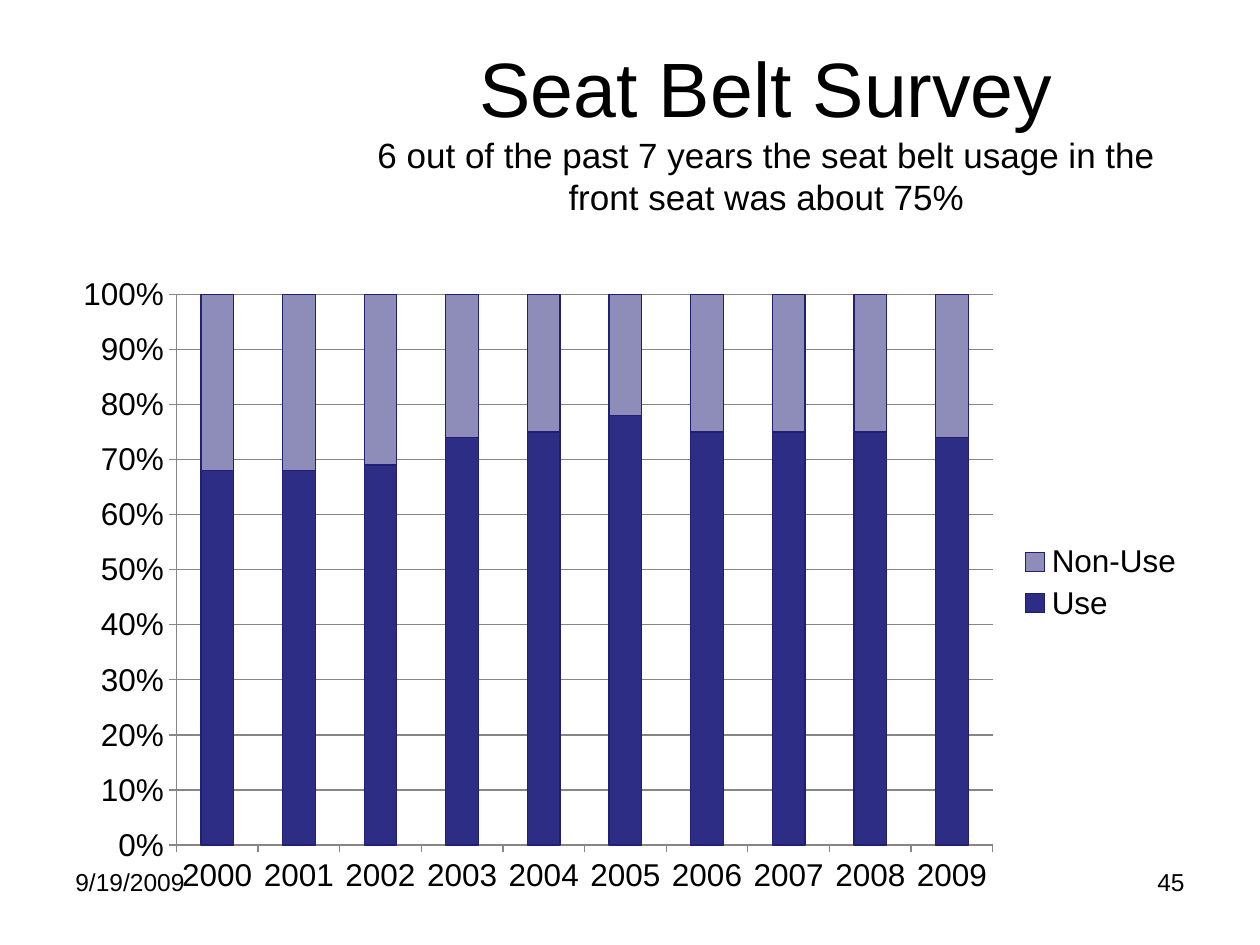
"""Build a slide with a stacked chart of seat belt use by year."""
from dataclasses import dataclass

from lxml import etree
from pptx import Presentation
from pptx.chart.data import CategoryChartData
from pptx.dml.color import RGBColor
from pptx.enum.chart import XL_CHART_TYPE, XL_LEGEND_POSITION, XL_TICK_MARK
from pptx.enum.text import MSO_ANCHOR, MSO_AUTO_SIZE, PP_ALIGN
from pptx.oxml import parse_xml
from pptx.oxml.ns import nsdecls
from pptx.util import Cm, Pt

STACKED = XL_CHART_TYPE.COLUMN_STACKED_100
LEGEND_RIGHT = XL_LEGEND_POSITION.RIGHT
TICK_OUTSIDE = XL_TICK_MARK.OUTSIDE
MIDDLE = MSO_ANCHOR.MIDDLE
NO_FIT = MSO_AUTO_SIZE.NONE
LEFT, CENTER, RIGHT = PP_ALIGN.LEFT, PP_ALIGN.CENTER, PP_ALIGN.RIGHT

FONT = "Arial"
COLORS = {"text": "000000", "use": "2D2D86", "non_use": "8E8CB8",
          "outline": "1F1F73", "grid": "868686"}
PLOT_AREA = {"x": 0.1, "y": 0.05, "w": 0.72, "h": 0.86}
YEARS = [str(year) for year in range(2000, 2010)]
USE = [68, 68, 69, 74, 75, 78, 75, 75, 75, 74]


@dataclass
class Footer:
    text: str
    left: float
    align: PP_ALIGN


FOOTERS = [Footer("9/19/2009", 1.27, LEFT), Footer("45", 18.2, RIGHT)]


def color(name: str) -> RGBColor:
    """Return a named colour."""
    return RGBColor.from_string(COLORS[name])


def apply(target, values: dict) -> None:
    """Set each attribute of the target from the values."""
    for name, value in values.items():
        setattr(target, name, value)


def style_font(font, size: int) -> None:
    """Give a font the slide's typeface and colour."""
    apply(font, {"name": FONT, "size": Pt(size), "bold": False})
    font.color.rgb = color("text")


def add_title(page) -> None:
    """Fill the title placeholder with a heading and a smaller second line."""
    box = page.shapes.title
    apply(box, {"left": Cm(6.77), "top": Cm(1.9), "width": Cm(17.36), "height": Cm(3.18)})
    apply(box.text_frame, {"vertical_anchor": MIDDLE, "auto_size": NO_FIT,
                           "word_wrap": True, "margin_bottom": Cm(1.91)})
    para = box.text_frame.paragraphs[0]
    para.alignment = CENTER
    heading = para.add_run()
    heading.text = "Seat Belt Survey"
    style_font(heading.font, 44)
    para.add_line_break()
    finding = para.add_run()
    finding.text = "6 out of the past 7 years the seat belt usage in the front seat was about 75%"
    style_font(finding.font, 20)


def place_plot(chart) -> None:
    """Fix the inner plot area as fractions of the chart."""
    plot_area = chart._chartSpace.chart.plotArea
    for old in plot_area.findall("{*}layout"):
        plot_area.remove(old)
    layout = parse_xml(f"<c:layout {nsdecls('c')}><c:manualLayout/></c:layout>")
    settings = {"layoutTarget": "inner", "xMode": "edge", "yMode": "edge", **PLOT_AREA}
    namespace = etree.QName(layout).namespace
    for name, value in settings.items():
        etree.SubElement(layout[0], f"{{{namespace}}}{name}").set("val", str(value))
    plot_area.insert(0, layout)


def add_survey_chart(page) -> None:
    """Add the chart of use and non-use shares."""
    data = CategoryChartData()
    data.categories = YEARS
    data.add_series("Use ", USE)
    data.add_series("Non-Use", [100 - share for share in USE])
    chart = page.shapes.add_chart(
        STACKED, Cm(1.27), Cm(5.29), Cm(22.86), Cm(12.91), data).chart
    style_font(chart.font, 18)
    apply(chart, {"has_title": False, "has_legend": True})
    apply(chart.legend, {"position": LEGEND_RIGHT, "include_in_layout": False})

    plot = chart.plots[0]
    apply(plot, {"gap_width": 150, "overlap": 100, "vary_by_categories": False})
    for series, name in zip(plot.series, ("use", "non_use")):
        series.format.fill.solid()
        series.format.fill.fore_color.rgb = color(name)
        series.format.line.color.rgb = color("outline")
        series.format.line.width = Pt(0.75)

    shares = chart.value_axis
    apply(shares, {"minimum_scale": 0, "maximum_scale": 1, "major_unit": 0.1,
                   "has_major_gridlines": True})
    apply(shares.tick_labels, {"number_format": "0%", "number_format_is_linked": False})
    for axis in (shares, chart.category_axis):
        axis.major_tick_mark = TICK_OUTSIDE
    for part in (shares, chart.category_axis, shares.major_gridlines):
        part.format.line.color.rgb = color("grid")
        part.format.line.width = Pt(0.75)
    place_plot(chart)


def add_footer(page, footer: Footer) -> None:
    """Add one line of text at the foot of the page."""
    box = page.shapes.add_textbox(Cm(footer.left), Cm(17.35), Cm(5.93), Cm(1.32))
    box.text_frame.word_wrap = True
    para = box.text_frame.paragraphs[0]
    para.alignment = footer.align
    span = para.add_run()
    span.text = footer.text
    style_font(span.font, 14)


def main() -> None:
    """Build and save the deck."""
    deck = Presentation()
    apply(deck, {"slide_width": Cm(25.4), "slide_height": Cm(19.05)})
    page = deck.slides.add_slide(deck.slide_layouts[5])
    add_title(page)
    add_survey_chart(page)
    for footer in FOOTERS:
        add_footer(page, footer)
    deck.save("out.pptx")


if __name__ == "__main__":
    main()
